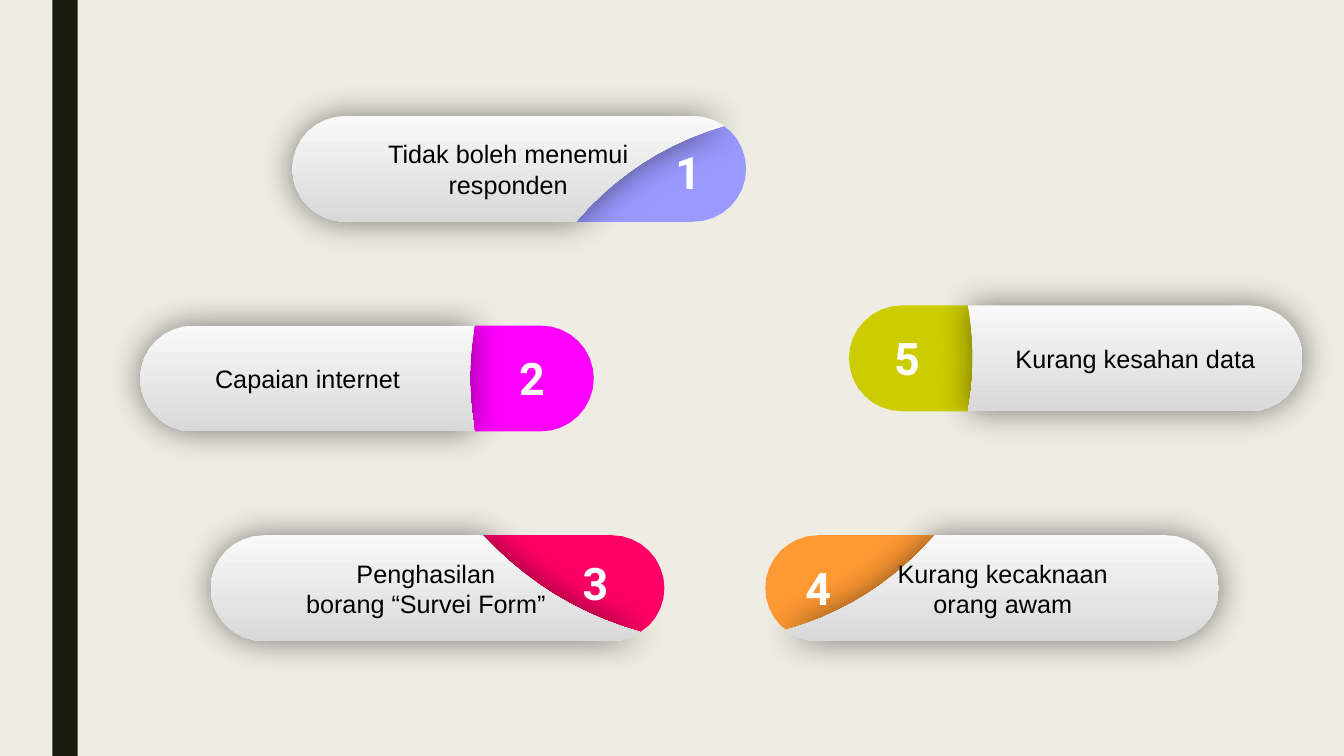
from math import cos, hypot, pi, sin

from lxml.etree import SubElement
from pptx import Presentation
from pptx.dml.color import RGBColor
from pptx.enum.shapes import MSO_SHAPE as Shape
from pptx.enum.text import MSO_ANCHOR as Anchor, MSO_AUTO_SIZE as AutoSize, PP_ALIGN as Align
from pptx.oxml.ns import qn
from pptx.util import Inches, Pt

BACKGROUND = RGBColor(0xEF, 0xED, 0xE3)
BAR = RGBColor(0x19, 0x1B, 0x0E)
BLACK = RGBColor(0, 0, 0)
WHITE = RGBColor(0xFF, 0xFF, 0xFF)
PILL_TOP = RGBColor(0xF9, 0xF9, 0xF9)
PILL_BOTTOM = RGBColor(0xD9, 0xD9, 0xD9)
LILAC = RGBColor(0x99, 0x99, 0xFF)
MAGENTA = RGBColor(0xFF, 0x00, 0xFF)
CRIMSON = RGBColor(0xFF, 0x00, 0x66)
ORANGE = RGBColor(0xFF, 0x99, 0x33)
OLIVE = RGBColor(0xCC, 0xCC, 0x00)

SLIDE_W, SLIDE_H = 13.33, 7.5
PILL_W, PILL_H = 4.5, 1.05
RADIUS = PILL_H / 2
NUMBER_W, NUMBER_H = 0.49, 0.64

# Cuts between label and badge, for a badge on the right: upper end, lower end, bulge
RISING = ((4.28, 0.1), (2.81, PILL_H), 0.13)
UPRIGHT = ((3.32, 0), (3.32, PILL_H), 0.05)
FALLING = ((2.7, 0), (4.26, 0.96), 0.13)
FALLING_SHORT = ((2.82, 0), (4.29, 0.94), 0.13)

# number, label, badge colour, pill corner, cut, badge on the left, number offset
OBSTACLES = [
    ("1", "Tidak boleh menemui\nresponden", LILAC, (2.9, 1.15), RISING, False, (3.7, 0.24)),
    ("2", "Capaian internet", MAGENTA, (1.39, 3.23), UPRIGHT, False, (3.66, 0.2)),
    ("3", "Penghasilan\nborang “Survei Form”", CRIMSON, (2.09, 5.31), FALLING, False, (3.59, 0.15)),
    ("4", "Kurang kecaknaan\norang awam", ORANGE, (7.59, 5.31), FALLING_SHORT, True, (0.3, 0.2)),
    ("5", "Kurang kesahan data", OLIVE, (8.42, 3.03), UPRIGHT, True, (0.35, 0.2)),
]


def pill_outline(steps=8):
    """Points clockwise from the middle of the left end, with steps per quarter turn."""
    def arc(centre_x, start, quarters):
        angles = [start + pi / 2 * i / steps for i in range(quarters * steps + 1)]
        return [(centre_x + RADIUS * cos(a), RADIUS + RADIUS * sin(a)) for a in angles]

    return (arc(RADIUS, pi, 1) + arc(PILL_W - RADIUS, -pi / 2, 2)
            + arc(RADIUS, pi / 2, 1)[:-1])


def split_pill(cut, steps=10):
    """Return the outlines of badge and label on either side of the cut."""
    (ax, ay), (bx, by), bulge = cut
    dx, dy = bx - ax, by - ay
    length = hypot(dx, dy)
    curve = []
    for i in range(steps + 1):
        t = i / steps
        bow = 4 * bulge * t * (1 - t) / length
        curve.append((ax + dx * t - dy * bow, ay + dy * t + dx * bow))
    outline = pill_outline()
    inside = [i for i, (x, y) in enumerate(outline)
              if dx * (y - ay) - dy * (x - ax) < -0.01]
    first, last = inside[0], inside[-1] + 1
    return outline[first:last] + curve[::-1], outline[last:] + outline[:first] + curve


def add_outline(group, points, corner, mirrored):
    left, top = corner
    placed = [(Inches(left + (PILL_W - x if mirrored else x)), Inches(top + y))
              for x, y in points]
    builder = group.shapes.build_freeform(*placed[0])
    builder.add_line_segments(placed[1:], close=True)
    part = builder.convert_to_shape()
    part.line.fill.background()
    part.shadow.inherit = False
    return part


def add_glow(part):
    """Soft black shadow without offset."""
    effects = part._element.spPr.find(qn("a:effectLst"))
    shadow = SubElement(effects, qn("a:outerShdw"), blurRad=str(Pt(24)), dist="0",
                        dir="0", algn="ctr", rotWithShape="0")
    black = SubElement(shadow, qn("a:srgbClr"), val=str(BLACK))
    SubElement(black, qn("a:alpha"), val="50000")


def write(frame, text, font, size, color, align, bold=False):
    frame.text = text
    for paragraph in frame.paragraphs:
        paragraph.alignment = align
        for run in paragraph.runs:
            run.font.name, run.font.size = font, Pt(size)
            run.font.bold, run.font.color.rgb = bold, color


def add_obstacle(slide, number, label, color, corner, cut, mirrored, offset):
    group = slide.shapes.add_group_shape()
    badge_points, label_points = split_pill(cut)

    badge = add_outline(group, badge_points, corner, mirrored)
    badge.fill.solid()
    badge.fill.fore_color.rgb = color

    body = add_outline(group, label_points, corner, mirrored)
    body.fill.gradient()
    body.fill.gradient_angle = 270
    for stop, shade in zip(body.fill.gradient_stops, (PILL_TOP, PILL_BOTTOM)):
        stop.color.rgb = shade
    add_glow(body)
    body.text_frame.word_wrap = True
    body.text_frame.vertical_anchor = Anchor.MIDDLE
    write(body.text_frame, label, "Arial", 18, BLACK, Align.CENTER)

    left, top = (start + shift for start, shift in zip(corner, offset))
    digit = group.shapes.add_textbox(Inches(left), Inches(top),
                                     Inches(NUMBER_W), Inches(NUMBER_H)).text_frame
    digit.word_wrap = False
    digit.auto_size = AutoSize.SHAPE_TO_FIT_TEXT
    write(digit, number, "Roboto", 32, WHITE, Align.LEFT, bold=True)


def main():
    deck = Presentation()
    deck.slide_width, deck.slide_height = Inches(SLIDE_W), Inches(SLIDE_H)
    slide = deck.slides.add_slide(deck.slide_layouts[6])
    slide.background.fill.solid()
    slide.background.fill.fore_color.rgb = BACKGROUND

    bar = slide.shapes.add_shape(Shape.RECTANGLE, Inches(0.52), 0,
                                 Inches(0.25), Inches(SLIDE_H))
    bar.fill.solid()
    bar.fill.fore_color.rgb = BAR
    bar.line.fill.background()
    bar.shadow.inherit = False

    for obstacle in OBSTACLES:
        add_obstacle(slide, *obstacle)
    deck.save("out.pptx")


if __name__ == "__main__":
    main()
